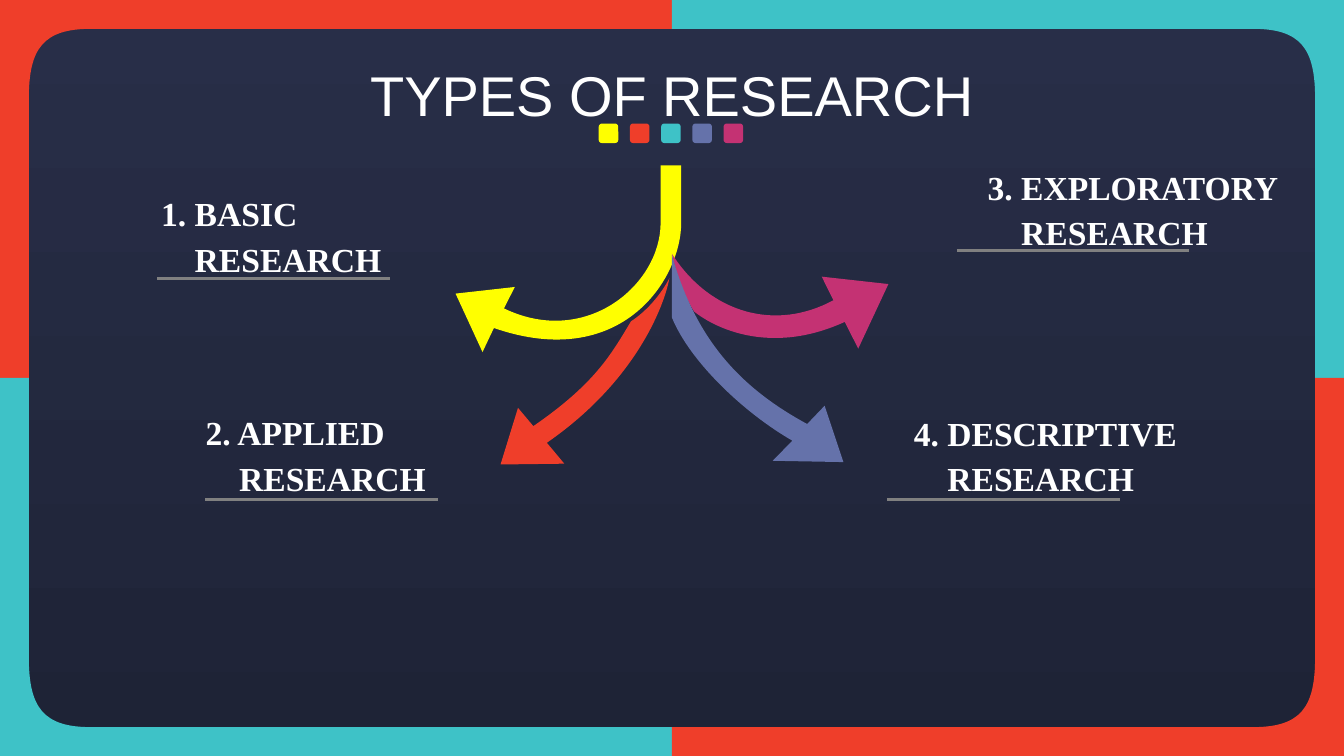
from lxml import etree
from pptx import Presentation
from pptx import util as u
from pptx.dml.color import RGBColor
from pptx.enum import shapes as es, text as et
from pptx.oxml import ns

WIDE, HIGH = 50.8, 28.58
INK = {
    "yellow": "FFFF00", "red": "EF3E2A", "teal": "3EC2C7", "blue": "6572AA",
    "pink": "C43273", "white": "FFFFFF", "gray": "808080",
    "top": "282E48", "base": "1E2336",
}
DOTS = ["yellow", "red", "teal", "blue", "pink"]

ARROWS = [
    ("yellow", (17.22, 6.25), [
        (7.75, 0), (8.53, 0), (8.53, 2.16),
        ((8.53, 4.32), (6.25, 7.82), (1.45, 6.15)),
        (1.02, 7.06), (0, 4.85), (2.24, 4.6), (1.83, 5.41),
        ((4.95, 6.91), (7.75, 4.5), (7.75, 2.18))]),
    ("red", (18.92, 10.52), [
        (6.38, 0), ((6.25, 0.79), (5.28, 3.78), (1.75, 6.22)),
        (2.41, 7.01), (0, 7.04), (0.66, 4.9), (1.24, 5.59),
        ((3.56, 3.99), (4.17, 2.9), (4.93, 1.63)),
        ((5.49, 1.27), (6.05, 0.64), (6.38, 0))]),
    ("pink", (25.4, 9.6), [
        (0.84, 2.18), ((1.6, 2.79), (3.71, 3.86), (6.53, 2.57)),
        (7.04, 3.58), (8.18, 1.14), (5.66, 0.86), (6.1, 1.75),
        ((3.96, 2.92), (1.47, 2.29), (0, 0)),
        ((0.13, 0.69), (0.53, 1.73), (0.84, 2.18))]),
    ("blue", (25.4, 9.65), [
        (0, 0), (0, 2.36), ((0.69, 4.04), (2.74, 5.97), (4.55, 7.01)),
        (3.81, 7.77), (6.48, 7.82), (5.77, 5.69), (5.11, 6.38),
        ((2.62, 5.03), (0.91, 3.23), (0, 0))]),
]

LABELS = [
    ("1. BASIC", (5.84, 7.83, 9.68, 2.82), (0.1, 2.69)),
    ("2. APPLIED", (7.52, 16.1, 9.58, 2.82), (0.23, 2.77)),
    ("3. EXPLORATORY", (37.08, 6.83, 11.46, 2.9), (-0.91, 2.64)),
    ("4. DESCRIPTIVE", (34.29, 16.13, 11.76, 2.82), (-0.76, 2.75)),
]


def tint(name):
    """Return the named colour."""
    return RGBColor.from_string(INK[name])


def paint(shape, name):
    """Give a shape a flat fill with no line or shadow."""
    shape.fill.solid()
    shape.fill.fore_color.rgb = tint(name)
    shape.line.fill.background()
    shape.shadow.inherit = False


def write(para, words, font="Times New Roman", size=36, bold=True,
          align=None, line=24.5, before=0, indent=0):
    """Fill a paragraph with formatted text."""
    run = para.add_run()
    run.text = words
    run.font.name, run.font.size, run.font.bold = font, u.Pt(size), bold
    run.font.color.rgb = tint("white")
    para.alignment = align
    para.line_spacing, para.space_before = u.Pt(line), u.Pt(before)
    if indent:
        para._p.get_or_add_pPr().set("marL", str(u.Cm(indent)))


def trace(slide, box, steps, name, flip=(1, 1)):
    """Draw an outline of points and cubic curves from the origin of a box."""
    def place(spot):
        """Turn a point in the box into slide units."""
        return tuple(u.Cm(o + f * v) for o, f, v in zip(box, flip, spot))

    curves = [len(step) == 3 for step in steps]
    ends = [place(step[-1] if curved else step)
            for step, curved in zip(steps, curves)]
    pen = slide.shapes.build_freeform(*ends[0], scale=1.0)
    pen.add_line_segments(ends[1:], close=True)
    shape = pen.convert_to_shape()
    paint(shape, name)
    route = shape._element.spPr.find(".//" + ns.qn("a:path"))
    for node, step, curved in zip(list(route), steps, curves):
        if curved:
            arc = etree.Element(ns.qn("a:cubicBezTo"))
            for x, y in map(place, step):
                etree.SubElement(arc, ns.qn("a:pt"),
                                 x=str(x - shape.left), y=str(y - shape.top))
            route.replace(node, arc)


def draw_back(slide):
    """Fill the background with a vertical gradient."""
    fill = slide.background.fill
    fill.gradient()
    fill.gradient_angle = 270
    for stop, name in zip(fill.gradient_stops, ("top", "base")):
        stop.color.rgb = tint(name)


def draw_frame(slide, box):
    """Place four mirrored corner pieces around a box."""
    left, top, wide, high = box
    rim, midx, midy = 1.09, wide / 2, high / 2
    steps = [(0, midy), (0, 0), (midx, 0), (midx, rim), (3.45, rim),
             ((1.63, rim), (rim, 1.83), (rim, 3.73)), (rim, midy)]
    for row in (0, 1):
        for col in (0, 1):
            trace(slide, (left + col * wide, top + row * high), steps,
                  "red" if row == col else "teal", (1 - 2 * col, 1 - 2 * row))


def draw_title(slide, box):
    """Place the heading in the title placeholder."""
    head = slide.shapes.title
    head.left, head.top, head.width, head.height = map(u.Cm, box)
    frame = head.text_frame
    frame.margin_left = frame.margin_right = 0
    frame.margin_top = frame.margin_bottom = 0
    frame.auto_size = et.MSO_AUTO_SIZE.NONE
    frame.vertical_anchor = et.MSO_ANCHOR.TOP
    write(frame.paragraphs[0], "TYPES OF RESEARCH", font="Arial", size=60,
          bold=False, align=et.PP_ALIGN.CENTER, line=88)


def draw_dots(slide, box):
    """Spread the row of coloured dots across a box."""
    left, top, wide, size = box
    gap = (wide - size) / (len(DOTS) - 1)
    for i, name in enumerate(DOTS):
        dot = slide.shapes.add_shape(
            es.MSO_SHAPE.ROUNDED_RECTANGLE,
            *map(u.Cm, (left + i * gap, top, size, size)))
        paint(dot, name)


def draw_label(slide, box, words, shift):
    """Place a two-line label and the rule beneath it."""
    frame = slide.shapes.add_textbox(*map(u.Cm, box)).text_frame
    frame.word_wrap = True
    frame.margin_right = 0
    write(frame.paragraphs[0], words)
    write(frame.add_paragraph(), "RESEARCH", before=24.5, indent=1.27)
    x, y = box[0] + shift[0], box[1] + shift[1]
    rule = slide.shapes.add_connector(
        es.MSO_CONNECTOR.STRAIGHT, *map(u.Cm, (x, y, x + 8.79, y)))
    rule.line.color.rgb = tint("gray")
    rule.line.width = u.Pt(3)
    etree.SubElement(rule._element.spPr, ns.qn("a:effectLst"))


def main():
    """Build and save the slide."""
    deck = Presentation()
    deck.slide_width, deck.slide_height = u.Cm(WIDE), u.Cm(HIGH)
    slide = deck.slides.add_slide(deck.slide_layouts[5])
    draw_back(slide)
    for name, box, steps in ARROWS:
        trace(slide, box, steps, name)
    for words, box, shift in LABELS:
        draw_label(slide, box, words, shift)
    draw_title(slide, (10.77, 1.73, 29.26, 2.92))
    draw_dots(slide, (22.63, 4.67, 5.46, 0.74))
    draw_frame(slide, (0, 0, WIDE, HIGH))
    deck.save("out.pptx")


if __name__ == "__main__":
    main()
